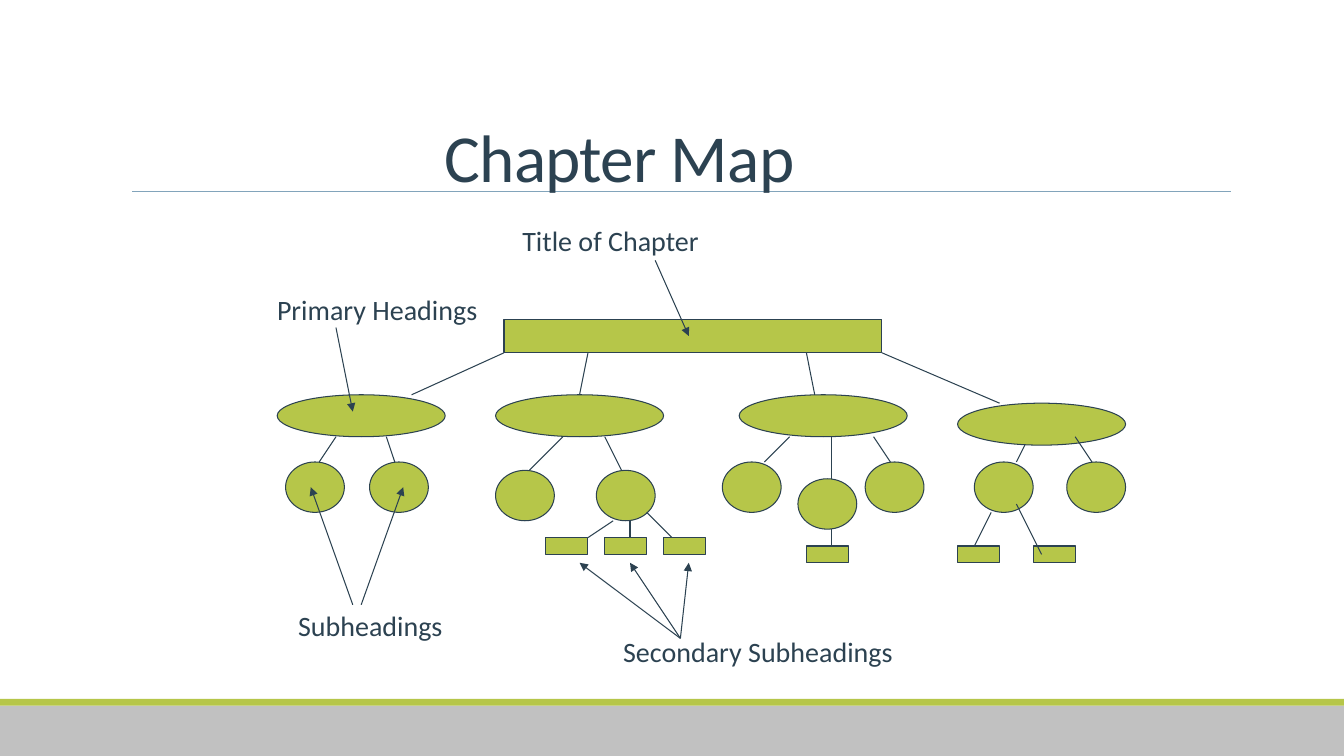
from lxml import etree
from pptx import Presentation
from pptx import util as u
from pptx.dml.color import RGBColor
from pptx.enum import shapes, text
from pptx.oxml.ns import qn

COLORS = {"ink": "2C4251", "green": "B6C649", "gray": "C1C1C1", "rule": "82A4BB"}
RECT = shapes.MSO_SHAPE.RECTANGLE
OVAL = shapes.MSO_SHAPE.OVAL


def grid(n):
    return u.Cm(n * 2.54 / 12)


def color(name):
    return RGBColor.from_string(COLORS[name])


def apply(target, values):
    for key, value in values.items():
        setattr(target, key, value)


class MapSlide:
    font = {"name": "Calibri"}
    line_width = 0.75

    def __init__(self, slide):
        self.shapes = slide.shapes

    def node(self, kind, left, top, width, height, fill="green", outlined=True):
        node = self.shapes.add_shape(kind, *map(grid, (left, top, width, height)))
        node.shadow.inherit = False
        node.fill.solid()
        node.fill.fore_color.rgb = color(fill)
        if outlined:
            node.line.color.rgb = color("ink")
            node.line.width = u.Pt(self.line_width)
        else:
            node.line.fill.background()

    def link(self, x1, y1, x2, y2, ink="ink", width=line_width, arrow=False):
        link = self.shapes.add_connector(
            shapes.MSO_CONNECTOR.STRAIGHT, *map(grid, (x1, y1, x2, y2)))
        link.line.color.rgb = color(ink)
        link.line.width = u.Pt(width)
        properties = link._element.spPr
        if arrow:
            etree.SubElement(properties.find(qn("a:ln")), qn("a:tailEnd"), type="triangle")
        etree.SubElement(properties, qn("a:effectLst"))

    def label(self, words, left, top, width, height, size=20, frame=None, paragraph=None, spacing=None):
        box = self.shapes.add_textbox(*map(grid, (left, top, width, height))).text_frame
        apply(box, {"word_wrap": True, **(frame or {})})
        line = box.paragraphs[0]
        apply(line, paragraph or {})
        run = line.add_run()
        run.text = words
        apply(run.font, {**self.font, "size": u.Pt(size)})
        run.font.color.rgb = color("ink")
        if spacing:
            run._r.get_or_add_rPr().set("spc", str(spacing))


def main():
    deck = Presentation()
    apply(deck, {"slide_width": grid(160), "slide_height": grid(90)})
    chapter = MapSlide(deck.slides.add_slide(deck.slide_layouts[6]))

    chapter.node(RECT, 0, 84, 160, 6, "gray", False)
    chapter.node(RECT, 0, 83.2, 160, 0.8, "green", False)
    chapter.link(15.75, 22.75, 146.5, 22.75, "rule", 0.5)
    chapter.label("Chapter Map", 23.5, 9, 100.5, 15, 48,
                  {"vertical_anchor": text.MSO_ANCHOR.BOTTOM},
                  {"alignment": text.PP_ALIGN.CENTER, "line_spacing": 0.85}, -50)

    chapter.node(RECT, 60, 38, 45, 4)
    levels = [
        (OVAL, 20, 5, [(33, 47), (59, 47), (88, 47), (114, 48)]),
        (OVAL, 7, 6, [(34, 55), (44, 55), (59, 56), (71, 56), (86, 55),
                      (95, 57), (103, 55), (116, 55), (127, 55)]),
        (RECT, 5, 2, [(65, 64), (72, 64), (79, 64), (96, 65), (114, 65), (123, 65)]),
    ]
    for kind, width, height, corners in levels:
        for left, top in corners:
            chapter.node(kind, left, top, width, height)

    title_links = [(60, 42, 49, 47), (70, 42, 69, 47), (96, 42, 97, 47), (105, 42, 119, 48)]
    heading_links = [
        (40, 52, 38, 55), (46, 52, 47, 55), (67, 52, 63, 56), (72, 52, 74, 56),
        (94, 52, 91, 55), (99, 52, 99, 57), (104, 52, 106, 55),
        (122, 53, 121, 55), (128, 52, 130, 55),
    ]
    subheading_links = [
        (73, 62, 70, 64), (75, 62, 75, 64), (77, 61, 80, 64),
        (99, 63, 99, 65), (118, 61, 116, 65), (121, 60, 124, 66),
    ]
    for ends in title_links + heading_links + subheading_links:
        chapter.link(*ends)

    callouts = [
        ("Title of Chapter", (61, 26, 33.7, 5.2), True, [(78, 31, 82, 40)]),
        ("Primary Headings", (31.8, 34.2, 27.2, 5.2), False, [(40, 39, 42, 49)]),
        ("Subheadings", (34.3, 71.9, 34.7, 5.2), True, [(42, 72, 37, 58), (43, 72, 48, 58)]),
        ("Secondary Subheadings", (73, 75, 34.7, 9.2), True,
         [(81, 76, tip, 67) for tip in (69, 75, 82)]),
    ]
    for words, place, wrap, pointers in callouts:
        chapter.label(words, *place, frame={"word_wrap": wrap})
        for ends in pointers:
            chapter.link(*ends, arrow=True)

    deck.save("out.pptx")


if __name__ == "__main__":
    main()
